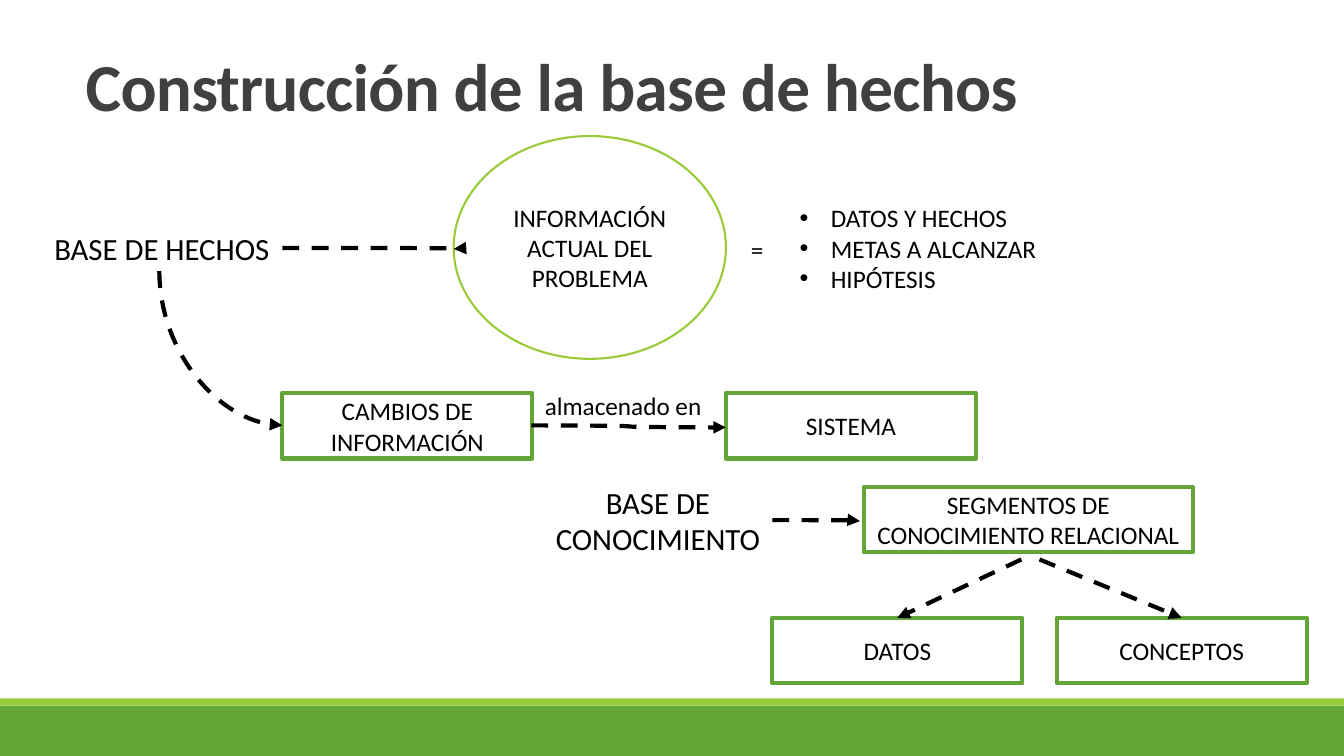
from lxml.etree import SubElement as Sub
from pptx import Presentation
from pptx.dml.color import RGBColor
from pptx.enum.dml import MSO_LINE as Dash
from pptx.enum.shapes import MSO_CONNECTOR as Conn, MSO_SHAPE as Kind
from pptx.enum.text import MSO_ANCHOR as Anchor, MSO_AUTO_SIZE as Fit, PP_ALIGN as Align
from pptx.oxml.ns import qn
from pptx.util import Inches, Pt

GREEN, LIME, BLACK, WHITE, GREY = "63A537", "99CB38", "000000", "FFFFFF", "404040"


def color(code):
    return RGBColor.from_string(code)


class Board:
    font = "Calibri"

    def __init__(self, deck):
        self.slide = deck.slides.add_slide(deck.slide_layouts[1])
        self.shapes = self.slide.shapes

    def place(self, shape, box):
        shape.left, shape.top, shape.width, shape.height = map(Inches, box)

    def style(self, shape, text, size, align, anchor=Anchor.MIDDLE, tint=BLACK, bold=False):
        frame = shape.text_frame
        frame.text = text
        frame.word_wrap = True
        frame.auto_size = Fit.NONE
        frame.vertical_anchor = anchor
        for para in frame.paragraphs:
            para.alignment = align
            para.space_before = Pt(0)
            for run in para.runs:
                font = run.font
                font.name, font.size, font.bold = self.font, Pt(size), bold
                font.color.rgb = color(tint)
        return frame

    def title(self, text, box):
        shape = self.shapes.title
        self.place(shape, box)
        frame = self.style(shape, text, 48, Align.JUSTIFY, Anchor.TOP, GREY, True)
        para = frame.paragraphs[0]
        para.line_spacing = 0.85
        para.runs[0].font._element.set("spc", "-50")

    def list(self, items, box):
        shape = self.slide.placeholders[1]
        self.place(shape, box)
        frame = self.style(shape, "\n".join(items), 18, Align.LEFT, Anchor.TOP)
        frame.word_wrap = False
        for para in frame.paragraphs:
            props = para._p.get_or_add_pPr()
            props.set("marL", str(Inches(0.31)))
            props.set("indent", str(Inches(-0.31)))
            Sub(props, qn("a:buChar"), char="•")

    def label(self, text, box, size=18, align=Align.CENTER, indent=0.07):
        shape = self.shapes.add_textbox(*map(Inches, box))
        para = self.style(shape, text, size, align).paragraphs[0]
        if indent:
            para.space_before = Pt(3)
            para._p.get_or_add_pPr().set("marL", str(Inches(indent)))

    def shape(self, kind, box, fill, line=None, width=0):
        shape = self.shapes.add_shape(kind, *map(Inches, box))
        shape.shadow.inherit = False
        shape.fill.solid()
        shape.fill.fore_color.rgb = color(fill)
        if line:
            shape.line.color.rgb = color(line)
            shape.line.width = Pt(width)
        else:
            shape.line.fill.background()
        return shape

    def node(self, text, left, top, width=2.48):
        shape = self.shape(Kind.RECTANGLE, (left, top, width, 0.65), WHITE, GREEN, 3)
        self.style(shape, text, 18, Align.CENTER)
        return shape

    def arrow(self, start, end, kind=Conn.STRAIGHT, bend=None):
        line = self.shapes.add_connector(kind, *map(Inches, start + end))
        line.line.color.rgb = color(BLACK)
        line.line.width = Pt(3)
        line.line.dash_style = Dash.DASH
        props = line._element.spPr
        Sub(props.find(qn("a:ln")), qn("a:tailEnd"), type="triangle")
        Sub(props, qn("a:effectLst"))
        if bend:
            guides = props.find(qn("a:prstGeom")).find(qn("a:avLst"))
            Sub(guides, qn("a:gd"), name="adj1", fmla=f"val {round(bend * 100000)}")
        return line

    def curve(self, start, end, bend):
        self.arrow(start, end, Conn.CURVE, bend)

    def drop(self, start, end):
        line = self.arrow(start, end, Conn.CURVE)
        wide, high = end[0] - start[0], end[1] - start[1]
        left = (start[0] + end[0] - high) / 2
        top = (start[1] + end[1] - wide) / 2
        self.place(line, (left, top, high, wide))
        props = line._element.spPr
        props.find(qn("a:prstGeom")).set("prst", "curvedConnector2")
        frame = props.find(qn("a:xfrm"))
        frame.set("rot", str(270 * 60000))
        frame.set("flipH", "1")


def main():
    deck = Presentation()
    deck.slide_width, deck.slide_height = Inches(13.33), Inches(7.5)
    board = Board(deck)

    board.shape(Kind.RECTANGLE, (0, 7, 13.33, 0.5), GREEN)
    board.shape(Kind.RECTANGLE, (0, 6.93, 13.33, 0.07), LIME)
    board.title("Construcción de la base de hechos", (0.75, 0.51, 11.82, 1.43))

    board.label("BASE DE HECHOS", (0.37, 2.22, 2.42, 0.48), 22, Align.JUSTIFY)
    facts = board.shape(Kind.OVAL, (4.5, 1.35, 2.7, 2.21), WHITE, LIME, 1.5)
    board.style(facts, "INFORMACIÓN ACTUAL DEL PROBLEMA", 18, Align.CENTER)
    board.curve((2.8, 2.46), (4.5, 2.47), 1.06)
    board.label("=", (7.35, 2.27, 0.33, 0.4), align=Align.LEFT, indent=0)
    board.list(["DATOS Y HECHOS", "METAS A ALCANZAR", "HIPÓTESIS"], (7.83, 1.96, 2.57, 1.01))

    board.node("CAMBIOS DE INFORMACIÓN", 2.8, 3.9)
    board.drop((1.58, 2.69), (2.8, 4.22))
    board.node("SISTEMA", 7.2, 3.9)
    board.curve((5.27, 4.22), (7.2, 4.24), 0.5)
    board.label("almacenado en", (5.18, 3.77, 1.93, 0.5))

    board.label("BASE DE CONOCIMIENTO", (5.28, 4.92, 2.42, 0.48), 22)
    board.node("SEGMENTOS DE CONOCIMIENTO RELACIONAL", 8.57, 4.83, 3.26)
    board.curve((7.66, 5.16), (8.53, 5.17), 1.03)
    for text, left, start in (("DATOS", 7.66, 10.13), ("CONCEPTOS", 10.48, 10.31)):
        node = board.node(text, left, 6.13)
        board.arrow((start, 5.55), (left + 1.24, 6.13)).end_connect(node, 0)

    deck.save("out.pptx")


if __name__ == "__main__":
    main()
